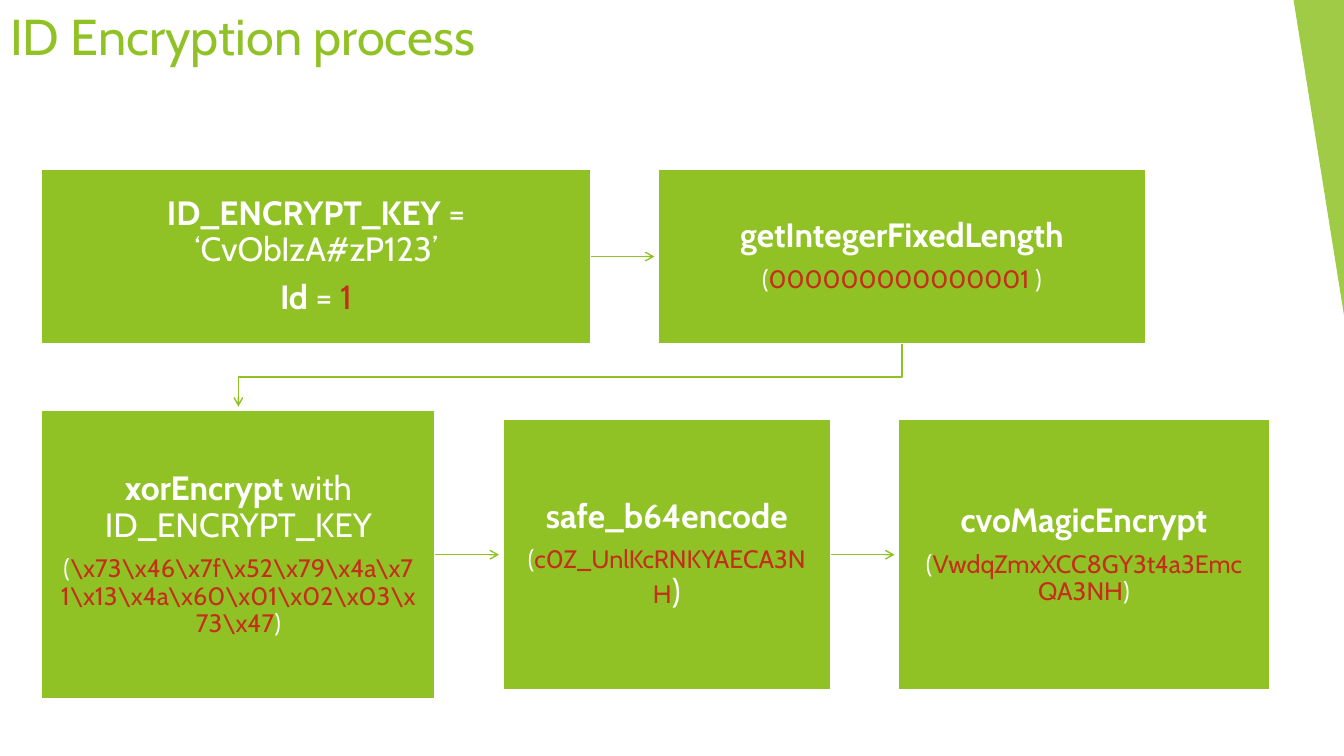
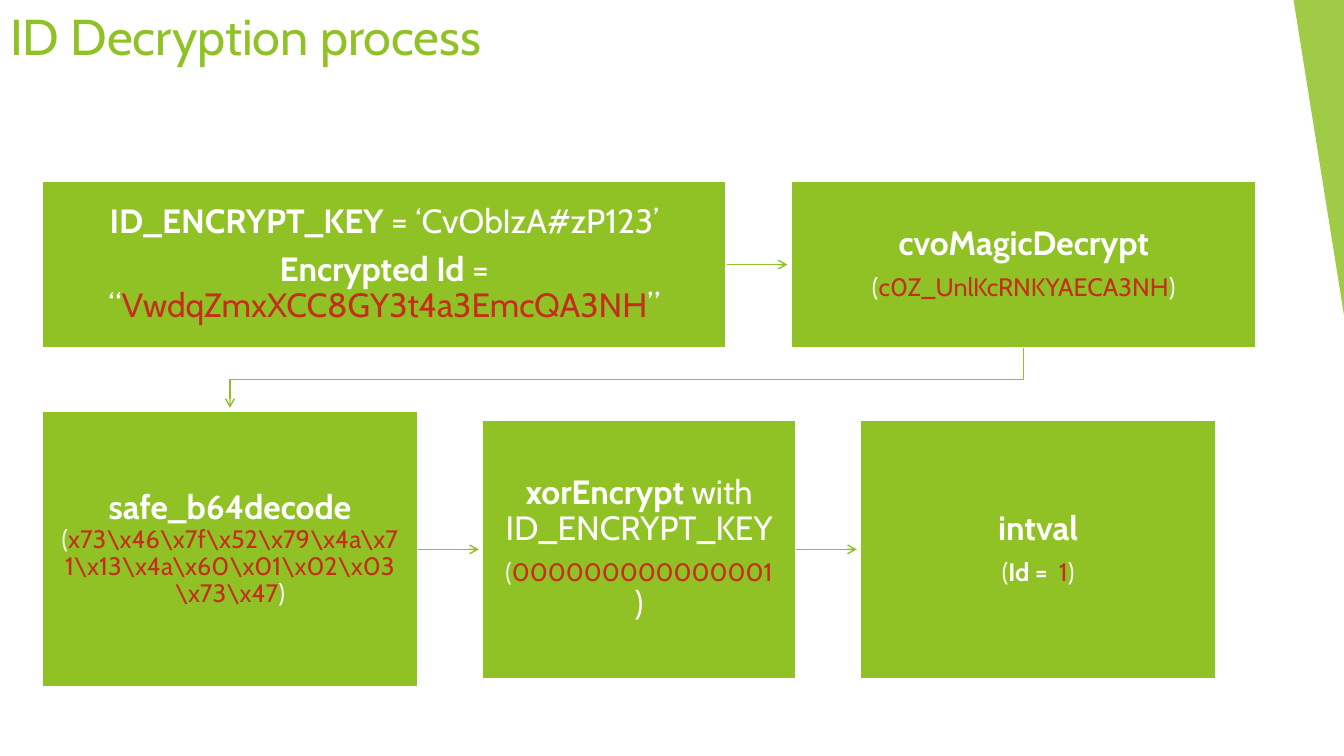
from collections import namedtuple

from lxml.etree import SubElement
from pptx import Presentation
from pptx.dml.color import RGBColor
from pptx.enum.shapes import MSO_CONNECTOR as Connector, MSO_SHAPE as Shape
from pptx.enum.text import MSO_ANCHOR as Anchor, MSO_AUTO_SIZE as AutoSize, PP_ALIGN as Align
from pptx.oxml.ns import qn
from pptx.util import Pt

GREEN = RGBColor(0x90, 0xC2, 0x26)
RED = RGBColor(0xC4, 0x2F, 0x1A)
WHITE = RGBColor(0xFF, 0xFF, 0xFF)

TextStyle = namedtuple("TextStyle", "size color bold", defaults=(False,))
TITLE = TextStyle(36, GREEN)
NAME = TextStyle(24, WHITE, True)
PLAIN = TextStyle(24, WHITE)
KEY_VALUE = TextStyle(24, RED)
SMALL = TextStyle(18, WHITE)
SMALL_NAME = TextStyle(18, WHITE, True)
SMALL_VALUE = TextStyle(18, RED)

# Lengths are points; paragraphs are lists of (text, style) runs.
Step = namedtuple("Step", "width height paragraphs")
Row = namedtuple("Row", "middle steps")
Box = namedtuple("Box", "left top width height")


def result(value, closing=SMALL):
    return [("(", SMALL), (value, SMALL_VALUE), (")", closing)]


KEY_LINE = [("ID_ENCRYPT_KEY", NAME), (" = ‘CvObIzA#zP123’", PLAIN)]
XOR_LINE = [("xorEncrypt", NAME), (" with ID_ENCRYPT_KEY", PLAIN)]

ENCRYPTION = [
    Row(183.25, [
        Step(392.5, 124.5, [KEY_LINE, [("Id", NAME), (" = ", PLAIN), ("1", KEY_VALUE)]]),
        Step(348.5, 124.5, [
            [("getIntegerFixedLength", NAME)],
            [("(", SMALL), ("000000000000001", SMALL_VALUE), (" )", SMALL)],
        ]),
    ]),
    Row(396.25, [
        Step(281.5, 206.5, [
            XOR_LINE,
            result(r"\x73\x46\x7f\x52\x79\x4a\x71\x13\x4a\x60\x01\x02\x03\x73\x47"),
        ]),
        Step(234.5, 193.5, [
            [("safe_b64encode", NAME)], result("c0Z_UnlKcRNKYAECA3NH", PLAIN),
        ]),
        Step(265.5, 193.5, [
            [("cvoMagicEncrypt", NAME)], result("VwdqZmxXCC8GY3t4a3EmcQA3NH"),
        ]),
    ]),
]

DECRYPTION = [
    Row(189, [
        Step(489, 119, [
            KEY_LINE,
            [("Encrypted Id", NAME), (" = “", PLAIN),
             ("VwdqZmxXCC8GY3t4a3EmcQA3NH", KEY_VALUE), ("”", PLAIN)],
        ]),
        Step(332.5, 119, [
            [("cvoMagicDecrypt", NAME)], result("c0Z_UnlKcRNKYAECA3NH"),
        ]),
    ]),
    Row(392.4, [
        Step(268.5, 197, [
            [("safe_b64decode ", NAME)]
            + result(r"x73\x46\x7f\x52\x79\x4a\x71\x13\x4a\x60\x01\x02\x03\x73\x47"),
        ]),
        Step(224, 185, [XOR_LINE, result("000000000000001 ", PLAIN)]),
        Step(254, 185, [
            [("intval", NAME)],
            [("(", SMALL), ("Id =  ", SMALL_NAME), ("1", SMALL_VALUE), (")", SMALL)],
        ]),
    ]),
]


class ProcessDeck:
    FONT = "Cabin"
    INSET = 13.5
    ARROW_CLEARANCE = 2.5

    def __init__(self):
        self.presentation = Presentation()
        self.presentation.slide_width = Pt(960)
        self.presentation.slide_height = Pt(540)
        self.layout = self.presentation.slide_layouts[5]
        self.slide = None

    def add_slide(self, title):
        slides = self.presentation.slides
        self.slide = slides.add_slide(self.layout)
        if len(slides) == 1:
            self.add_layout_band()
        self.add_title(title)

    def add_layout_band(self):
        """Draw the corner band and move it to the layout that all slides share."""
        builder = self.slide.shapes.build_freeform(Pt(924), 0)
        builder.add_line_segments([(Pt(960), 0), (Pt(960), Pt(225))], close=True)
        band = builder.convert_to_shape()
        band.shadow.inherit = False
        band.fill.solid()
        band.fill.fore_color.rgb = GREEN
        band.line.fill.background()
        color = band.element.spPr.find(".//" + qn("a:srgbClr"))
        SubElement(color, qn("a:alpha"), val="85000")
        self.layout.shapes.element.append(band.element)

    def add_run(self, paragraph, text, style):
        run = paragraph.add_run()
        run.text = text
        run.font.name = self.FONT
        run.font.size = Pt(style.size)
        run.font.bold = style.bold
        run.font.color.rgb = style.color

    def add_title(self, text):
        title = self.slide.shapes.title
        title.left, title.top = Pt(0), Pt(0)
        title.width, title.height = Pt(800), Pt(52.5)
        frame = title.text_frame
        frame.auto_size = AutoSize.NONE
        frame.vertical_anchor = Anchor.TOP
        frame.paragraphs[0].alignment = Align.LEFT
        self.add_run(frame.paragraphs[0], text, TITLE)

    def add_box(self, box, paragraphs):
        shape = self.slide.shapes.add_shape(Shape.RECTANGLE, *map(Pt, box))
        shape.shadow.inherit = False
        shape.fill.solid()
        shape.fill.fore_color.rgb = GREEN
        shape.line.color.rgb = WHITE
        shape.line.width = Pt(1.5)
        frame = shape.text_frame
        frame.word_wrap = True
        frame.vertical_anchor = Anchor.MIDDLE
        frame.margin_left = frame.margin_right = Pt(self.INSET)
        frame.margin_top = frame.margin_bottom = Pt(self.INSET)
        for index, runs in enumerate(paragraphs):
            paragraph = frame.add_paragraph() if index else frame.paragraphs[0]
            paragraph.alignment = Align.CENTER
            paragraph.line_spacing = 0.9
            paragraph.space_after = Pt(0.35 * runs[0][1].size)
            for text, style in runs:
                self.add_run(paragraph, text, style)

    def add_arrow(self, kind, *ends):
        arrow = self.slide.shapes.add_connector(kind, *map(Pt, ends))
        arrow.line.color.rgb = GREEN
        arrow.line.width = Pt(1)
        properties = arrow.element.spPr
        SubElement(properties.find(qn("a:ln")), qn("a:tailEnd"), type="arrow")
        SubElement(properties, qn("a:effectLst"))
        return arrow

    def add_arrow_right(self, source, target):
        middle = source.top + source.height / 2
        self.add_arrow(Connector.STRAIGHT, source.left + source.width, middle,
                       target.left - self.ARROW_CLEARANCE, middle)

    def add_arrow_to_next_row(self, source, target):
        """Run down, left and down again: an elbow turned by a quarter."""
        start_x = source.left + source.width / 2
        start_y = source.top + source.height
        end_x = target.left + target.width / 2
        space = target.top - start_y
        across, down = start_x - end_x, space - self.ARROW_CLEARANCE
        left = (start_x + end_x - down) / 2
        top = start_y + (down - across) / 2
        arrow = self.add_arrow(Connector.ELBOW, left, top, left + down, top + across)
        properties = arrow.element.spPr
        properties.find(qn("a:xfrm")).set("rot", "5400000")
        bend = round(100000 * space / 2 / down)
        SubElement(properties.find(".//" + qn("a:avLst")), qn("a:gd"),
                   name="adj1", fmla=f"val {bend}")

    def add_process(self, rows, left, gap):
        """Lay each row out from the left edge, centred on its middle line."""
        previous = None
        for row in rows:
            next_left = left
            for step in row.steps:
                box = Box(next_left, row.middle - step.height / 2, step.width, step.height)
                self.add_box(box, step.paragraphs)
                if previous and next_left == left:
                    self.add_arrow_to_next_row(previous, box)
                elif previous:
                    self.add_arrow_right(previous, box)
                previous = box
                next_left += step.width + gap


def main():
    deck = ProcessDeck()
    deck.add_slide("ID Encryption process")
    deck.add_process(ENCRYPTION, left=29.5, gap=48)
    deck.add_slide("ID Decryption process")
    deck.add_process(DECRYPTION, left=30, gap=46)
    deck.presentation.save("out.pptx")


if __name__ == "__main__":
    main()
